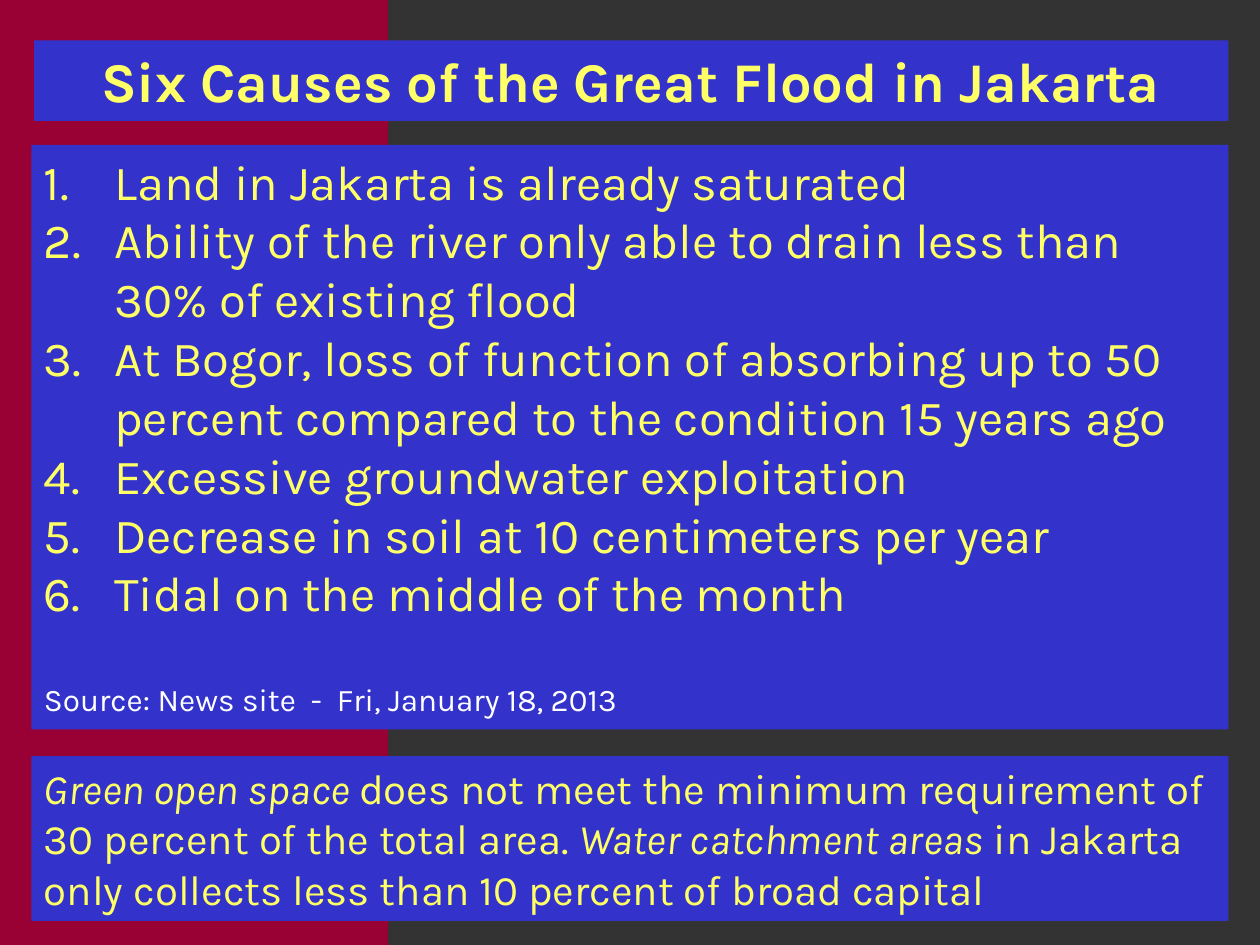
from pptx import Presentation
from pptx.dml.color import RGBColor
from pptx.enum.shapes import MSO_SHAPE
from pptx.enum.text import MSO_ANCHOR, MSO_AUTO_SIZE, PP_ALIGN
from pptx.oxml.ns import qn
from pptx.util import Inches, Pt
from lxml.etree import SubElement

COLORS = {
    "back": "333333",
    "band": "990033",
    "panel": "3333CC",
    "text": "FFFF66",
    "source": "FFFFFF",
}
FONT = "Karla"
CAUSES = [
    "Land in Jakarta is already saturated",
    "Ability of the river only able to drain less than 30% of existing flood",
    "At Bogor, loss of function of absorbing up to 50 percent compared to the condition 15 years ago",
    "Excessive groundwater exploitation",
    "Decrease in soil at 10 centimeters per year",
    "Tidal on the middle of the month",
]
NOTE = [
    ("Green open space ", True),
    ("does not meet the minimum requirement of 30 percent of the total area. ", False),
    ("Water catchment areas", True),
    (" in Jakarta only collects less than 10 percent of broad capital", False),
]


def paint(fill, name):
    fill.solid()
    fill.fore_color.rgb = RGBColor.from_string(COLORS[name])


def add_box(slide, left, top, width, height, color="panel"):
    box = slide.shapes.add_shape(
        MSO_SHAPE.RECTANGLE, Inches(left), Inches(top), Inches(width), Inches(height)
    )
    box.shadow.inherit = False
    paint(box.fill, color)
    box.line.fill.background()
    return box


def get_frame(box):
    frame = box.text_frame
    frame.word_wrap = True
    frame.auto_size = MSO_AUTO_SIZE.SHAPE_TO_FIT_TEXT
    frame.vertical_anchor = MSO_ANCHOR.TOP
    return frame


def next_para(frame, align=PP_ALIGN.LEFT):
    last = frame.paragraphs[-1]
    para = frame.add_paragraph() if last.runs else last
    para.alignment = align
    return para


def add_text(para, text, size, color="text", bold=False, italic=False):
    run = para.add_run()
    run.text = text
    font = run.font
    font.name, font.size = FONT, Pt(size)
    font.bold, font.italic = bold, italic
    font.color.rgb = RGBColor.from_string(COLORS[color])


def number(para):
    props = para._p.get_or_add_pPr()
    props.set("marL", str(Inches(0.56)))
    props.set("indent", str(Inches(-0.56)))
    SubElement(props, qn("a:buFont"), typeface=FONT)
    SubElement(props, qn("a:buAutoNum"), type="arabicPeriod")


def main():
    deck = Presentation()
    deck.slide_width, deck.slide_height = Inches(10), Inches(7.5)
    slide = deck.slides.add_slide(deck.slide_layouts[6])
    paint(slide.background.fill, "back")
    add_box(slide, 0, 0, 3.08, 7.5, "band")

    frame = get_frame(add_box(slide, 0.25, 1.15, 9.5, 4.64))
    for cause in CAUSES:
        para = next_para(frame)
        number(para)
        add_text(para, cause, 28)
    para = next_para(frame)
    para.space_before = Pt(33.6)
    add_text(para, "Source: News site  -  Fri, January 18, 2013", 18, color="source")

    para = next_para(get_frame(add_box(slide, 0.25, 6, 9.5, 1.31)))
    for text, italic in NOTE:
        add_text(para, text, 24, italic=italic)

    frame = get_frame(add_box(slide, 0.27, 0.32, 9.48, 0.64))
    para = next_para(frame, PP_ALIGN.CENTER)
    add_text(para, "Six Causes of the Great Flood in Jakarta", 32, bold=True)

    deck.save("out.pptx")


if __name__ == "__main__":
    main()
